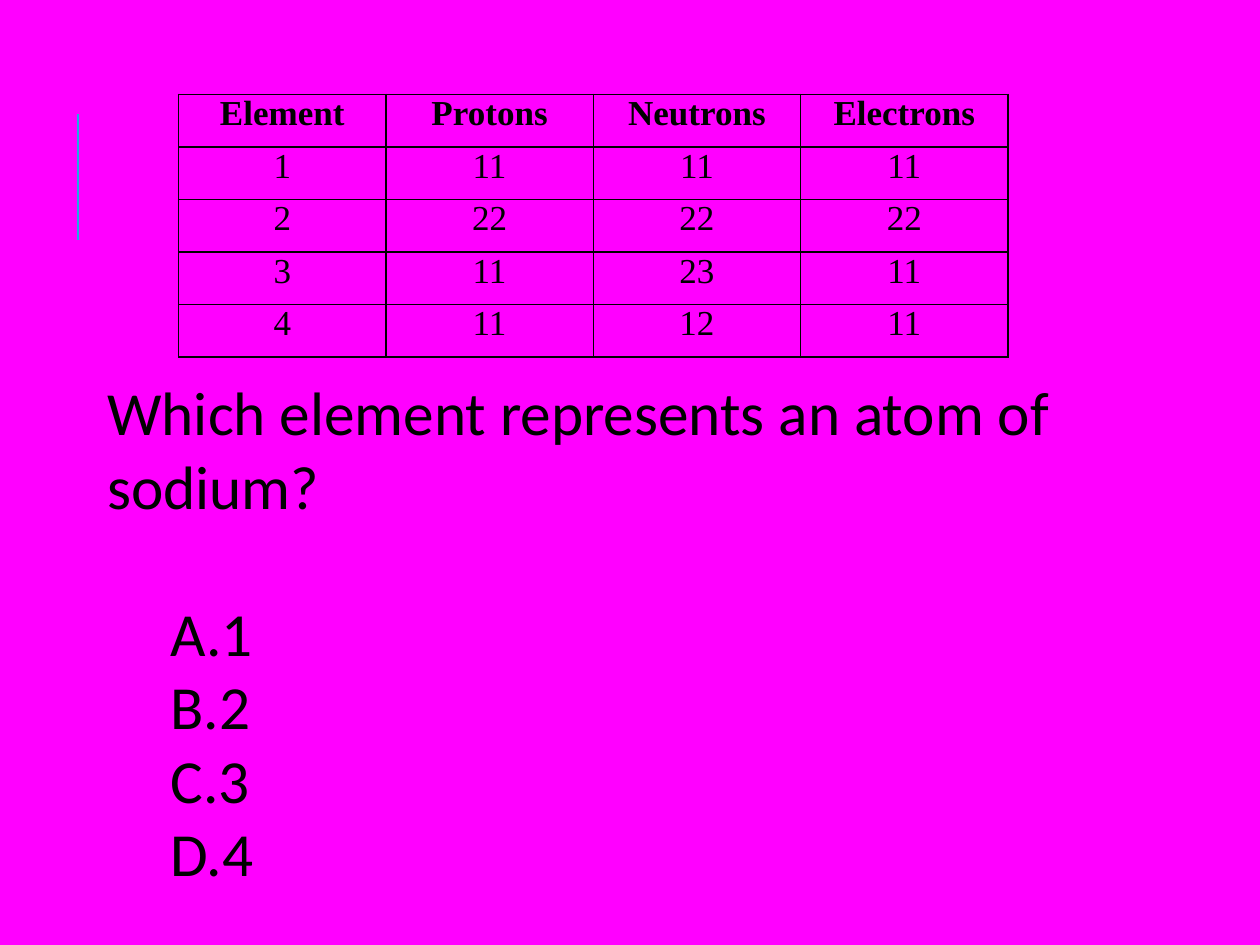
import pptx
import pptx.dml.color
import pptx.enum.shapes
import pptx.enum.text
import pptx.oxml
import pptx.oxml.ns
import pptx.util
from pptx.util import Cm, Pt

MAGENTA = pptx.dml.color.RGBColor(0xFF, 0x00, 0xFF)
BLACK = pptx.dml.color.RGBColor(0x00, 0x00, 0x00)
BLUE = pptx.dml.color.RGBColor(0x1C, 0xAD, 0xE4)
NS = pptx.oxml.ns.nsdecls("a")

ROWS = [
    ["Element", "Protons", "Neutrons", "Electrons"],
    ["1", "11", "11", "11"],
    ["2", "22", "22", "22"],
    ["3", "11", "23", "11"],
    ["4", "11", "12", "11"],
]
QUESTION = "Which element represents an atom of sodium?"
ANSWERS = ["1", "2", "3", "4"]


def add_text(p, text, font, size, bold=False):
    """Add one black run to a paragraph."""
    r = p.add_run()
    r.text = text
    r.font.name = font
    r.font.size = Pt(size)
    r.font.bold = bold
    r.font.color.rgb = BLACK


def add_accent(s):
    """Draw the vertical accent line."""
    line = s.shapes.add_connector(
        pptx.enum.shapes.MSO_CONNECTOR.STRAIGHT, Cm(1.57), Cm(4.83), Cm(1.57), Cm(2.29))
    line.line.color.rgb = BLUE
    line.line.width = Pt(1.5)
    line._element.spPr.append(pptx.oxml.parse_xml(f"<a:effectLst {NS}/>"))


def format_paragraph(p, bullet, indent=0, hanging=0, after=0):
    """Set spacing, indents and bullet of a body paragraph."""
    p.line_spacing = 1.0
    p.space_before = Pt(0)
    p.space_after = Pt(after)
    pPr = p._p.get_or_add_pPr()
    pPr.set("marL", str(int(Cm(indent))))
    pPr.set("indent", str(-int(Cm(hanging))))
    pPr.append(pptx.oxml.parse_xml(bullet))


def fill_body(sp):
    """Write the question and its lettered answers."""
    sp.left, sp.top, sp.width, sp.height = Cm(1.91), Cm(7.42), Cm(21.79), Cm(10.72)
    tf = sp.text_frame
    tf.word_wrap = True
    tf.auto_size = pptx.enum.text.MSO_AUTO_SIZE.SHAPE_TO_FIT_TEXT
    p = tf.paragraphs[0]
    format_paragraph(p, f"<a:buNone {NS}/>", after=42)
    add_text(p, QUESTION, "Calibri", 35)
    for answer in ANSWERS:
        p = tf.add_paragraph()
        p.level = 1
        format_paragraph(p, f'<a:buAutoNum {NS} type="alphaUcPeriod"/>', 2.24, 0.97)
        add_text(p, answer, "Calibri", 35)


def add_borders(cell):
    """Give a cell thin black borders on all sides."""
    tcPr = cell._tc.get_or_add_tcPr()
    for i, side in enumerate("LRTB"):
        tcPr.insert(i, pptx.oxml.parse_xml(
            f'<a:ln{side} {NS} w="{int(Pt(1))}"><a:solidFill><a:srgbClr val="{BLACK}"/>'
            f"</a:solidFill></a:ln{side}>"))


def add_particle_table(s):
    """Add the table of particle counts."""
    table = s.shapes.add_table(
        len(ROWS), len(ROWS[0]), Cm(3.6), Cm(1.9), Cm(16.72), Cm(5.3)).table
    table.first_row = table.horz_banding = False
    for i, row in enumerate(ROWS):
        for j, text in enumerate(row):
            cell = table.cell(i, j)
            cell.margin_left = cell.margin_right = Cm(0.18)
            cell.margin_top = cell.margin_bottom = 0
            cell.fill.background()
            add_borders(cell)
            p = cell.text_frame.paragraphs[0]
            p.alignment = pptx.enum.text.PP_ALIGN.CENTER
            add_text(p, text, "Times New Roman", 20, bold=i == 0)


def main():
    """Build and save the slide."""
    prs = pptx.Presentation()
    prs.slide_width, prs.slide_height = Cm(25.4), Cm(19.05)
    s = prs.slides.add_slide(prs.slide_layouts[1])
    s.background.fill.solid()
    s.background.fill.fore_color.rgb = MAGENTA
    title = s.shapes.title._element
    title.getparent().remove(title)
    add_accent(s)
    fill_body(s.placeholders[1])
    add_particle_table(s)
    prs.save("out.pptx")


if __name__ == "__main__":
    main()
